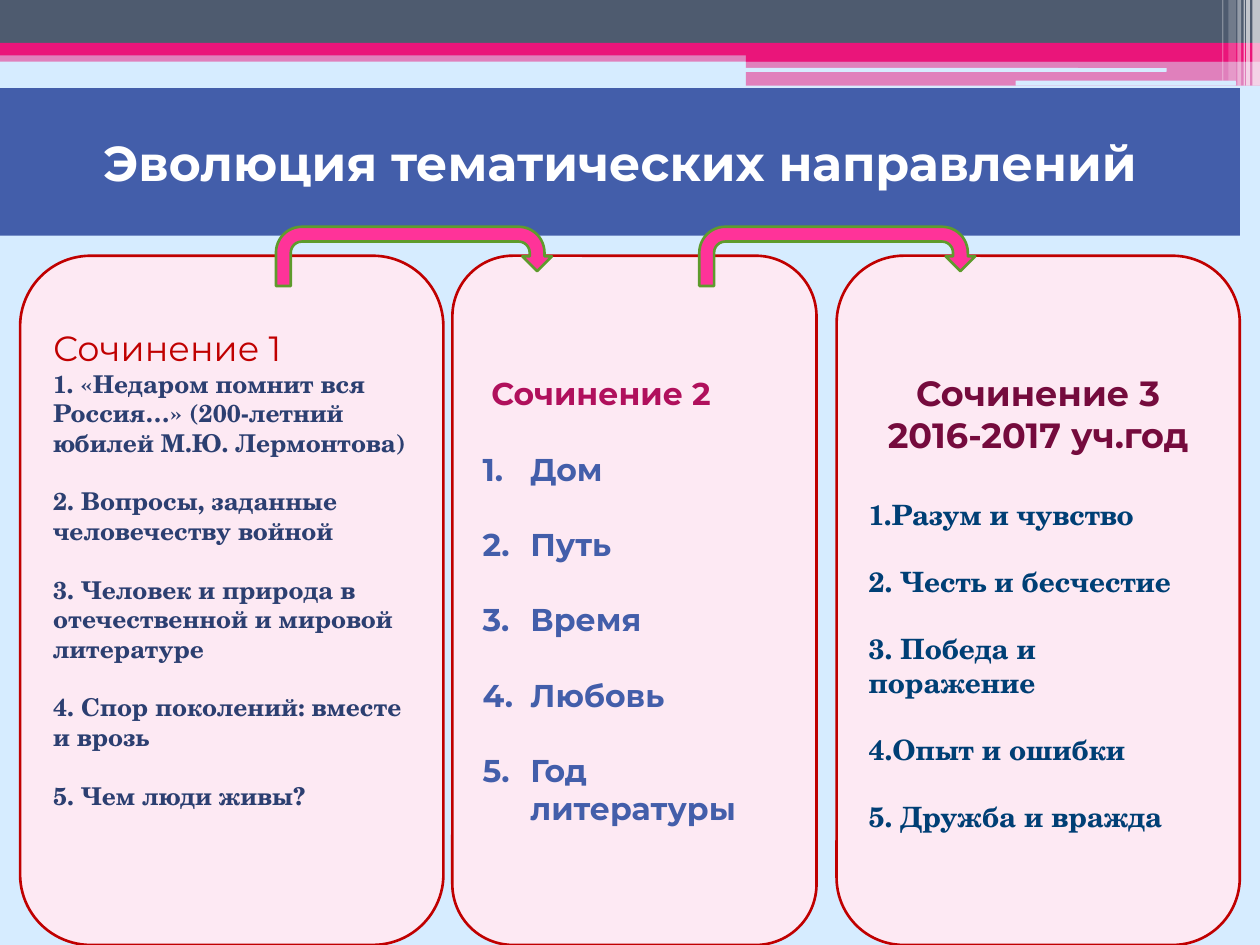
from lxml import etree
from pptx import Presentation
from pptx.dml.color import RGBColor
from pptx.enum.shapes import MSO_SHAPE
from pptx.enum.text import MSO_ANCHOR, PP_ALIGN
from pptx.oxml.ns import qn
from pptx.util import Inches, Pt

RECTANGLE = MSO_SHAPE.RECTANGLE
ROUNDED = MSO_SHAPE.ROUNDED_RECTANGLE
UTURN_ARROW = MSO_SHAPE.U_TURN_ARROW
LEFT, CENTER = PP_ALIGN.LEFT, PP_ALIGN.CENTER
TOP, MIDDLE = MSO_ANCHOR.TOP, MSO_ANCHOR.MIDDLE

SKY = RGBColor(0xD6, 0xEC, 0xFF)
SLATE = RGBColor(0x4E, 0x5B, 0x6F)
PINK = RGBColor(0xEA, 0x15, 0x7A)
WHITE = RGBColor(0xFF, 0xFF, 0xFF)
BLUE = RGBColor(0x43, 0x5E, 0xAA)
BLUSH = RGBColor(0xFD, 0xE9, 0xF3)
RED = RGBColor(0xC0, 0x00, 0x00)
NAVY = RGBColor(0x2C, 0x3F, 0x71)
MAGENTA = RGBColor(0xB0, 0x10, 0x5C)
WINE = RGBColor(0x75, 0x0B, 0x3D)
DEEP_BLUE = RGBColor(0x00, 0x3F, 0x75)
HOT_PINK = RGBColor(0xFF, 0x33, 0x99)
GREEN = RGBColor(0x5E, 0x9B, 0x2C)

SANS, SERIF = "Montserrat", "TeX Gyre Schola"

presentation = Presentation()
presentation.slide_width = Inches(10)
presentation.slide_height = Inches(7.5)
COLUMN = presentation.slide_width / 100
ROW = presentation.slide_height / 75

slide = presentation.slides.add_slide(presentation.slide_layouts[5])
slide.background.fill.solid()
slide.background.fill.fore_color.rgb = SKY


def add_block(kind, left, top, width, height, fill, opacity=100, line=None):
    shape = slide.shapes.add_shape(
        kind, int(left * COLUMN), int(top * ROW), int(width * COLUMN), int(height * ROW))
    shape.shadow.inherit = False
    shape.fill.solid()
    shape.fill.fore_color.rgb = fill
    if opacity < 100:
        color = shape.fill._xPr.find(qn("a:solidFill"))[0]
        etree.SubElement(color, qn("a:alpha"), val=str(opacity * 1000))
    if line is None:
        shape.line.fill.background()
    else:
        shape.line.color.rgb = line
        shape.line.width = Pt(1.5)
    return shape


def write(frame, text, size, font, color, bold=True, align=LEFT, before=0,
          indent=0, numbered=False):
    paragraph = frame.paragraphs[0] if not frame.text else frame.add_paragraph()
    paragraph.alignment = align
    paragraph.space_before = Pt(before)
    properties = paragraph._p.get_or_add_pPr()
    properties.set("marL", str(Inches(indent)))
    if numbered:
        properties.set("indent", str(-Inches(indent)))
        etree.SubElement(properties, qn("a:buFont"), typeface="+mj-lt")
        etree.SubElement(properties, qn("a:buAutoNum"), type="arabicPeriod")
    run = paragraph.add_run()
    run.text = text
    run.font.size = Pt(size)
    run.font.name = font
    run.font.bold = bold
    run.font.color.rgb = color


header_bars = [
    (RECTANGLE, 0, 4, 100, 0.9, PINK, 50),
    (RECTANGLE, 0, 0, 100, 3.4, SLATE, 100),
    (RECTANGLE, 0, 3.4, 100, 1, PINK, 100),
    (RECTANGLE, 59.2, 3.9, 40.8, 1, PINK, 100),
    (RECTANGLE, 59.2, 4.8, 40.8, 2, PINK, 50),
    (ROUNDED, 59.1, 5.4, 33.5, 0.3, SKY, 100),
    (ROUNDED, 80.6, 6.4, 17.5, 0.4, SKY, 100),
]
for bar in header_bars:
    add_block(*bar)

corner_stripes = [
    (99.4, 0.6, 6.8, 65),
    (98.9, 0.3, 6.8, 65),
    (98.7, 0.1, 6.8, 60),
    (98.2, 0.3, 6.8, 40),
    (97.5, 0.6, 6.4, 20),
    (97, 0.1, 6.4, 30),
]
for left, width, height, opacity in corner_stripes:
    add_block(RECTANGLE, left, 0, width, height, WHITE, opacity)

title = slide.shapes.title
title.left, title.top = 0, int(7 * ROW)
title.width, title.height = int(98.4 * COLUMN), int(11.7 * ROW)
title.fill.solid()
title.fill.fore_color.rgb = BLUE
title.text_frame.vertical_anchor = MIDDLE
write(title.text_frame, "Эволюция тематических направлений", 28, SANS, WHITE, align=CENTER)

cards = [
    {"left": 1.6, "width": 33.6, "inset": 0.4,
     "headings": ["Сочинение 1"],
     "heading_format": {"size": 20, "color": RED, "bold": False},
     "items": ["1. «Недаром помнит вся Россия…» (200-летний юбилей М.Ю. Лермонтова)",
               "2. Вопросы, заданные человечеству войной",
               "3. Человек и природа в отечественной и мировой литературе",
               "4. Спор поколений: вместе и врозь",
               "5. Чем люди живы?"],
     "item_format": {"size": 14, "font": SERIF, "color": NAVY},
     "first_gap": 0, "gap": 16.8},
    {"left": 35.9, "width": 28.9, "inset": 0.8,
     "headings": ["Сочинение 2"],
     "heading_format": {"size": 18, "color": MAGENTA, "indent": 0.07},
     "items": ["Дом", "Путь", "Время", "Любовь", "Год литературы"],
     "item_format": {"size": 18, "font": SANS, "color": BLUE,
                     "indent": 0.38, "numbered": True},
     "first_gap": 21.5, "gap": 21.5},
    {"left": 66.4, "width": 32, "inset": 0.76,
     "headings": ["Сочинение 3", "2016-2017 уч.год"],
     "heading_format": {"size": 20, "color": WINE, "align": CENTER},
     "items": ["1.Разум и чувство", "2. Честь и бесчестие", "3. Победа и поражение",
               "4.Опыт и ошибки", "5. Дружба и вражда"],
     "item_format": {"size": 16, "font": SERIF, "color": DEEP_BLUE},
     "first_gap": 24, "gap": 19.2},
]
for card in cards:
    shape = add_block(ROUNDED, card["left"], 20.3, card["width"], 54.7, BLUSH, line=RED)
    frame = shape.text_frame
    frame.word_wrap = True
    frame.vertical_anchor = TOP
    frame.margin_top = Inches(card["inset"])
    for heading in card["headings"]:
        write(frame, heading, font=SANS, **card["heading_format"])
    for index, item in enumerate(card["items"]):
        before = card["gap"] if index else card["first_gap"]
        write(frame, item, before=before, **card["item_format"])

for left in (21.9, 55.5):
    add_block(UTURN_ARROW, left, 18, 21.9, 4.7, HOT_PINK, line=GREEN)

presentation.save("out.pptx")
